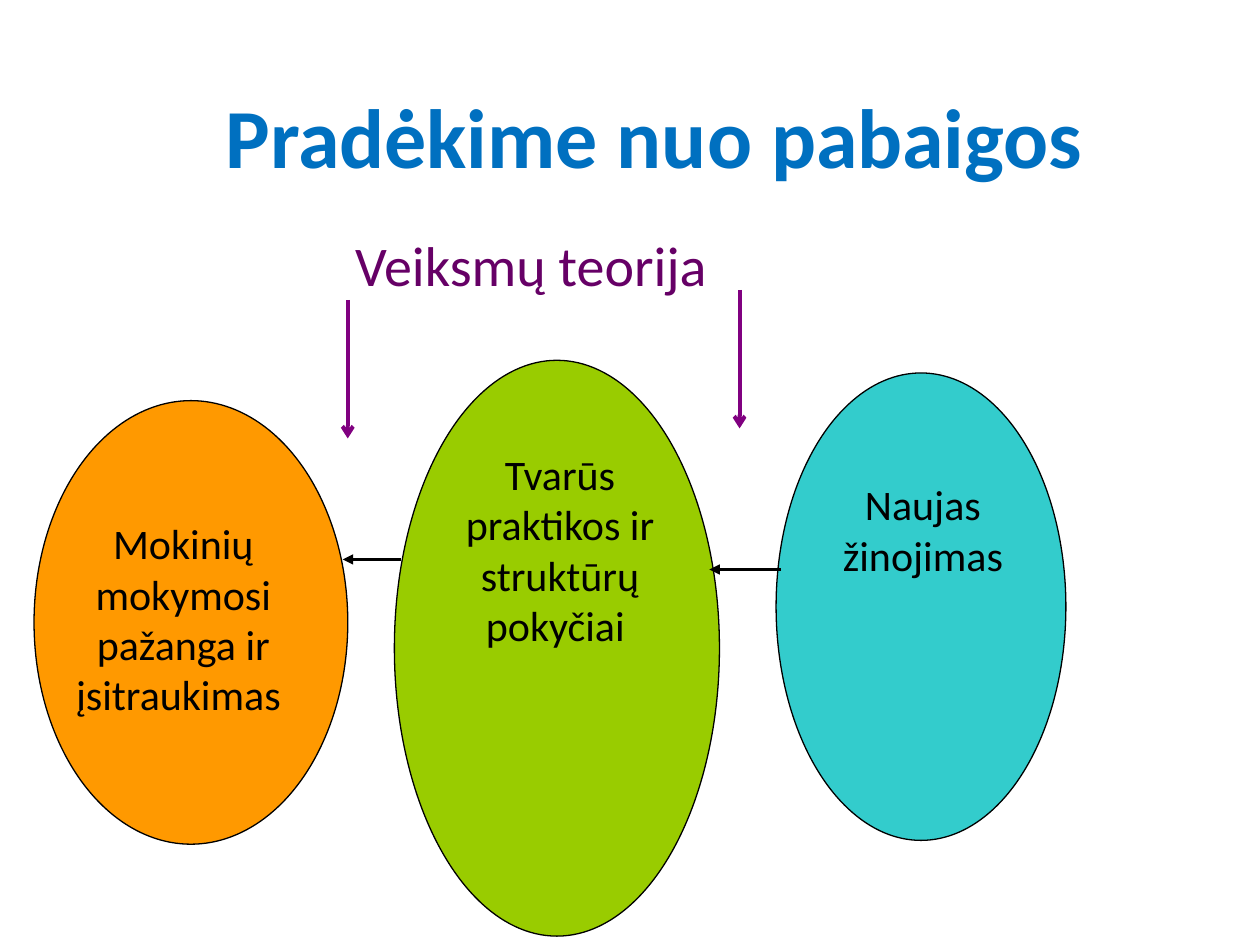
from typing import NamedTuple

from lxml import etree
from pptx import Presentation
from pptx.dml.color import RGBColor
from pptx.enum.shapes import MSO_CONNECTOR, MSO_SHAPE
from pptx.enum.text import MSO_ANCHOR, PP_ALIGN
from pptx.oxml.ns import qn
from pptx.util import Inches, Pt

OVAL = MSO_SHAPE.OVAL
STRAIGHT = MSO_CONNECTOR.STRAIGHT
TOP, BOTTOM = MSO_ANCHOR.TOP, MSO_ANCHOR.BOTTOM
LEFT, CENTER = PP_ALIGN.LEFT, PP_ALIGN.CENTER

COLUMNS, ROWS = 100, 75
SLIDE_WIDTH, SLIDE_HEIGHT = Inches(10), Inches(7.5)
FONT = "Calibri"
BLACK = "000000"
PURPLE = "800080"


class Area(NamedTuple):
    column: float
    row: float
    columns: float
    rows: float


class Label(NamedTuple):
    text: str
    area: Area
    size: int
    color: str = BLACK
    align: PP_ALIGN = CENTER
    anchor: MSO_ANCHOR = TOP
    bold: bool = False


class Stage(NamedTuple):
    area: Area
    fill: str
    label: Label


class Arrow(NamedTuple):
    start: tuple[float, float]
    end: tuple[float, float]
    color: str
    width: float
    head: str


STAGES = [
    Stage(Area(2.7, 31.8, 24.9, 35.2), "FF9900",
          Label("Mokinių mokymosi\vpažanga ir įsitraukimas ",
                Area(4.3, 40.6, 20.5, 17.2), 24)),
    Stage(Area(31.3, 28.6, 25.8, 45.7), "99CC00",
          Label("Tvarūs praktikos ir struktūrų pokyčiai ",
                Area(35, 35.1, 18.9, 17.2), 24)),
    Stage(Area(61.6, 29.6, 23, 37.1), "33CCCC",
          Label("Naujas žinojimas", Area(63.4, 37.5, 19.7, 9.1), 24)),
]

HEADINGS = [
    Label("Pradėkime nuo pabaigos", Area(16.9, 7.6, 74.8, 7.6), 48,
          "0070C0", LEFT, BOTTOM, True),
    Label("Veiksmų teorija", Area(27.2, 17.8, 46.1, 6.4), 32,
          "660066", LEFT),
]

ARROWS = [
    Arrow((31.8, 44.4), (27.2, 44.4), BLACK, 1.5, "triangle"),
    Arrow((62, 45.2), (56.3, 45.2), BLACK, 1.5, "triangle"),
    Arrow((58.7, 23), (58.7, 34), PURPLE, 2.25, "arrow"),
    Arrow((27.6, 23.8), (27.6, 34.8), PURPLE, 2.25, "arrow"),
]


def rgb(value: str) -> RGBColor:
    return RGBColor.from_string(value)


def across(columns: float) -> int:
    return round(SLIDE_WIDTH * columns / COLUMNS)


def down(rows: float) -> int:
    return round(SLIDE_HEIGHT * rows / ROWS)


def place(area: Area) -> tuple[int, int, int, int]:
    return (across(area.column), down(area.row),
            across(area.columns), down(area.rows))


def draw_oval(shapes, stage: Stage) -> None:
    oval = shapes.add_shape(OVAL, *place(stage.area))
    oval.shadow.inherit = False
    oval.fill.solid()
    oval.fill.fore_color.rgb = rgb(stage.fill)
    oval.line.color.rgb = rgb(BLACK)
    oval.line.width = Pt(0.75)


def draw_label(shapes, label: Label) -> None:
    frame = shapes.add_textbox(*place(label.area)).text_frame
    frame.word_wrap = True
    frame.vertical_anchor = label.anchor
    frame.text = label.text
    for paragraph in frame.paragraphs:
        paragraph.alignment = label.align
        for run in paragraph.runs:
            run.font.name = FONT
            run.font.size = Pt(label.size)
            run.font.bold = label.bold
            run.font.color.rgb = rgb(label.color)


def draw_arrow(shapes, arrow: Arrow) -> None:
    (start_column, start_row), (end_column, end_row) = arrow.start, arrow.end
    connector = shapes.add_connector(
        STRAIGHT, across(start_column), down(start_row),
        across(end_column), down(end_row))
    connector.line.color.rgb = rgb(arrow.color)
    connector.line.width = Pt(arrow.width)
    properties = connector.element.spPr
    etree.SubElement(properties.find(qn("a:ln")), qn("a:tailEnd"),
                     type=arrow.head)
    etree.SubElement(properties, qn("a:effectLst"))


def main() -> None:
    presentation = Presentation()
    presentation.slide_width = SLIDE_WIDTH
    presentation.slide_height = SLIDE_HEIGHT
    shapes = presentation.slides.add_slide(
        presentation.slide_layouts[6]).shapes
    for stage in STAGES:
        draw_oval(shapes, stage)
    for arrow in ARROWS:
        draw_arrow(shapes, arrow)
    for label in HEADINGS + [stage.label for stage in STAGES]:
        draw_label(shapes, label)
    presentation.save("out.pptx")


if __name__ == "__main__":
    main()
